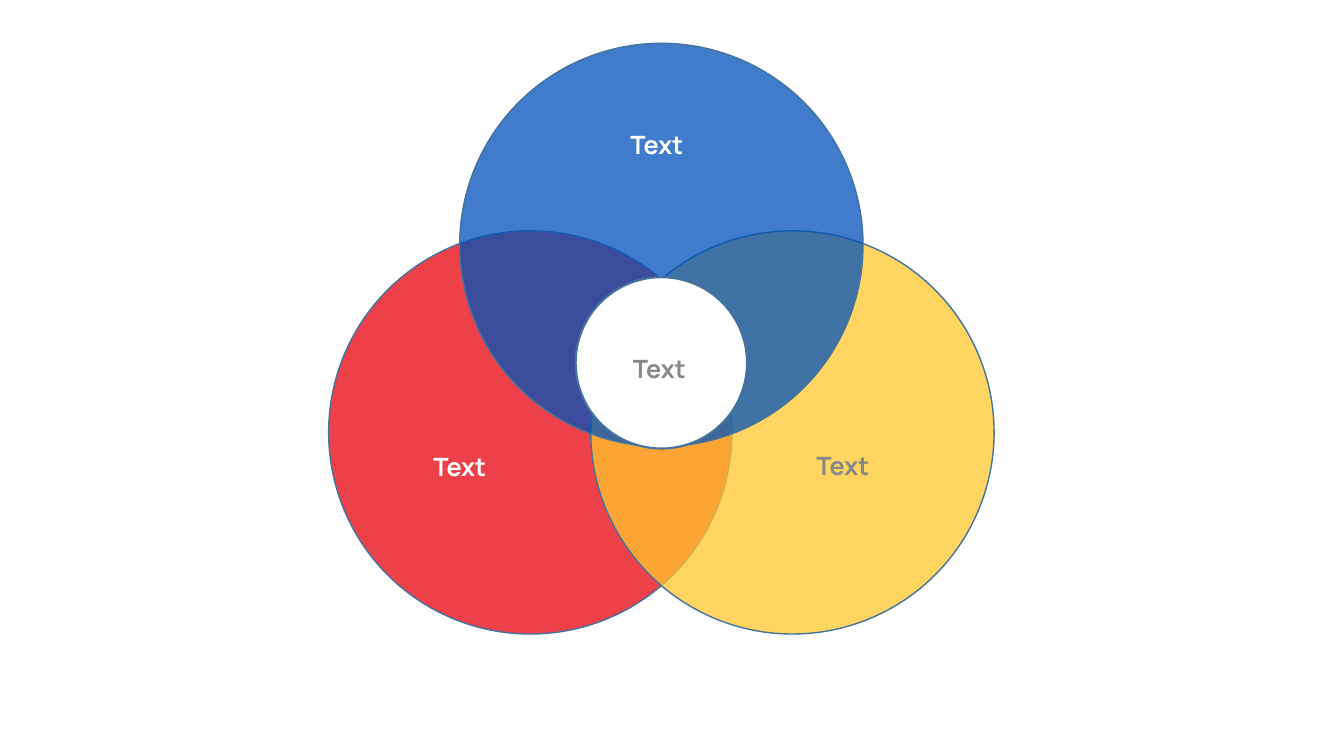
from lxml.etree import SubElement
from pptx import Presentation
from pptx.dml.color import RGBColor
from pptx.enum.shapes import MSO_SHAPE
from pptx.enum.text import MSO_AUTO_SIZE, PP_ALIGN
from pptx.oxml.ns import qn
from pptx.util import Inches, Pt

# Content
COLORS = {"red": "E8000D", "yellow": "FFC82D", "blue": "0051BA",
          "white": "FFFFFF", "grey": "85898A", "outline": "43739E"}
FONT = "Manrope"

# Layout: inches, x measured from the diagram's vertical axis
SLIDE_W, SLIDE_H = 13.33, 7.5
AXIS = 6.56
SPREAD = 1.3              # side circles sit this far from the axis
TOP_Y, HUB_Y, BASE_Y = 2.43, 3.6, 4.29
BIG, HUB = 4, 1.7         # diameters
LABEL_W, HUB_LABEL_W, LABEL_H = 2.56, 1.09, 0.4

# Centre x, centre y, diameter, fill, opacity %, line width
CIRCLES = [
    (-SPREAD, BASE_Y, BIG, "red", 75, 1),
    (SPREAD, BASE_Y, BIG, "yellow", 75, 1),
    (0, TOP_Y, BIG, "blue", 75, 1),
    (0, HUB_Y, HUB, "white", 100, 1.5),
]
# Text, centre x, centre y, width, colour
LABELS = [
    ("Text ", -0.02, 1.43, LABEL_W, "white"),
    ("Text", -2, 4.63, LABEL_W, "white"),
    ("Text", 1.8, 4.62, LABEL_W, "grey"),
    ("Text", -0.02, 3.66, HUB_LABEL_W, "grey"),
]


def rgb(name):
    return RGBColor.from_string(COLORS[name])


def box(x, y, w, h):
    """Left, top, width and height of a box centred on x, y."""
    return [Inches(v) for v in (AXIS + x - w / 2, y - h / 2, w, h)]


def add_circle(shapes, x, y, size, fill, opacity, line_width):
    sp = shapes.add_shape(MSO_SHAPE.OVAL, *box(x, y, size, size))
    sp.shadow.inherit = False
    sp.fill.solid()
    sp.fill.fore_color.rgb = rgb(fill)
    if opacity < 100:
        color = sp.element.spPr.find(qn("a:solidFill")).find(qn("a:srgbClr"))
        SubElement(color, qn("a:alpha")).set("val", str(opacity * 1000))
    sp.line.color.rgb = rgb("outline")
    sp.line.width = Pt(line_width)


def add_label(shapes, text, x, y, width, color):
    tf = shapes.add_textbox(*box(x, y, width, LABEL_H)).text_frame
    tf.word_wrap = True
    tf.auto_size = MSO_AUTO_SIZE.SHAPE_TO_FIT_TEXT
    p = tf.paragraphs[0]
    p.alignment = PP_ALIGN.CENTER
    r = p.add_run()
    r.text = text
    r.font.name = FONT
    r.font.size = Pt(18)
    r.font.bold = True
    r.font.color.rgb = rgb(color)


def main():
    prs = Presentation()
    prs.slide_width, prs.slide_height = Inches(SLIDE_W), Inches(SLIDE_H)
    s = prs.slides.add_slide(prs.slide_layouts[6])

    # Overlapping circles and the hub
    for circle in CIRCLES:
        add_circle(s.shapes, *circle)

    # Labels
    for label in LABELS:
        add_label(s.shapes, *label)

    prs.save("out.pptx")


if __name__ == "__main__":
    main()
